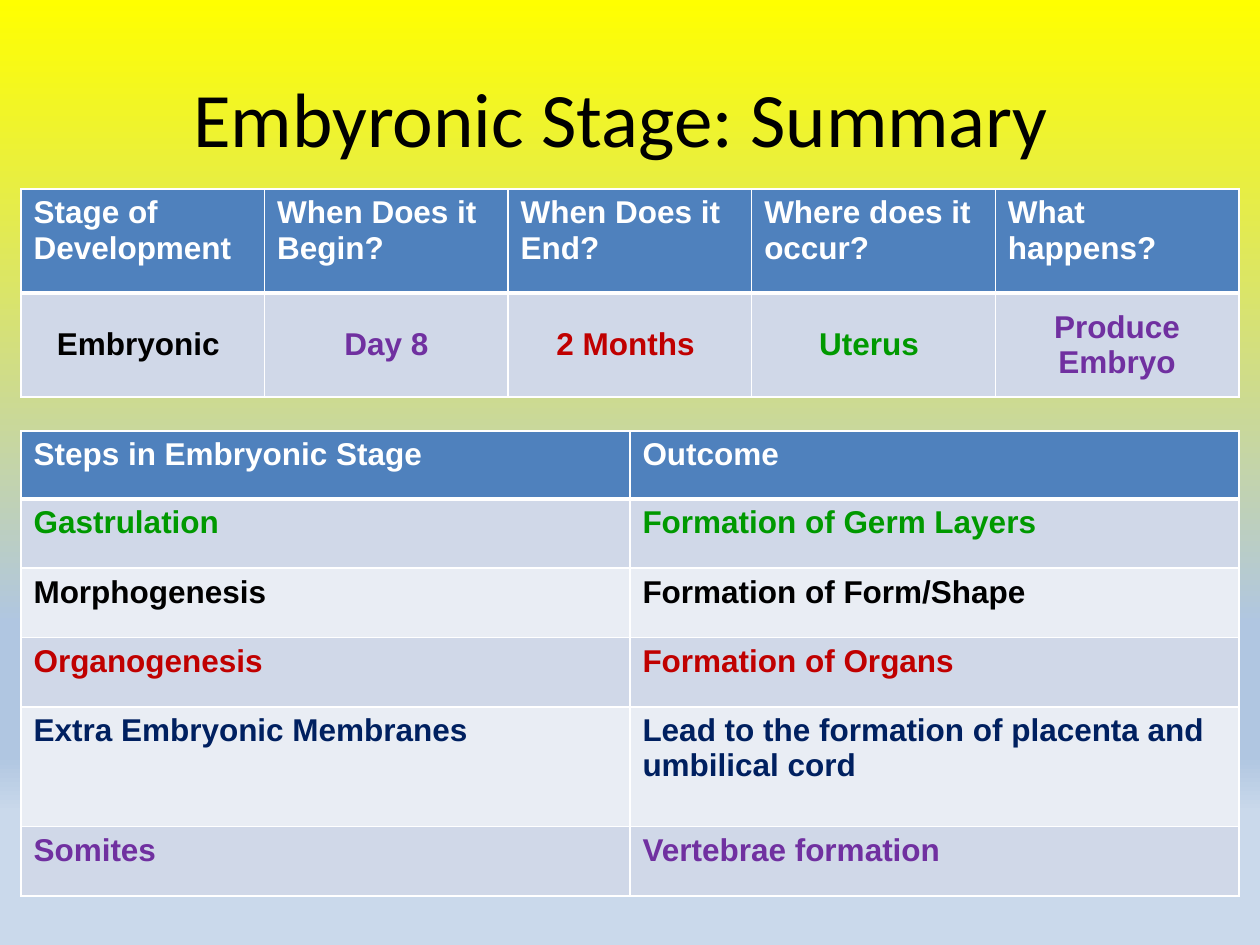
from lxml.etree import SubElement as Sub
from pptx import Presentation
from pptx.dml.color import RGBColor
from pptx.enum.text import MSO_ANCHOR as Anchor, PP_ALIGN as Align
from pptx.oxml.ns import qn
from pptx.util import Inches, Pt

WIDE, HIGH = 10, 7.5
SIDE = WIDE / 60
SPAN = WIDE - 2 * SIDE
WHITE, BLACK, BLUE, NAVY = "FFFFFF", "000000", "4F81BD", "002060"
GREEN, RED, PLUM = "009900", "C00000", "7030A0"
BANDS = ["D0D8E8", "E9EDF4"]
SKY = [(0, "FFFF00"), (66, "B0C6E1"), (80, "B0C6E1"), (86, "CAD9EB")]

STAGE = [
    ("Stage of Development", "Embryonic ", BLACK),
    ("When Does it Begin?", "Day 8", PLUM),
    ("When Does it End?", "2 Months ", RED),
    ("Where does it occur?", "Uterus ", GREEN),
    ("What happens?", "Produce Embryo", PLUM),
]
STEPS = [
    ("Steps in Embryonic Stage", "Outcome", WHITE),
    ("Gastrulation", "Formation of Germ Layers", GREEN),
    ("Morphogenesis", "Formation of Form/Shape", BLACK),
    ("Organogenesis", "Formation of Organs", RED),
    ("Extra Embryonic Membranes",
     "Lead to the formation of placenta and umbilical cord", NAVY),
    ("Somites", "Vertebrae formation", PLUM),
]


def hue(code):
    return RGBColor.from_string(code)


def style(font, **form):
    for name, value in form.items():
        if name == "color":
            font.color.rgb = hue(value)
        else:
            setattr(font, name, value)


def paint_back(slide):
    fill = slide.background.fill
    fill.gradient()
    fill.gradient_angle = 270
    stops = slide.background._cSld.find(".//" + qn("a:gsLst"))
    stops.clear()
    for place, code in SKY:
        stop = Sub(stops, qn("a:gs"), pos=str(place * 1000))
        Sub(stop, qn("a:srgbClr"), val=code)


def add_title(slide, box, text):
    title = slide.shapes.title
    title.left, title.top, title.width, title.height = map(Inches, box)
    frame = title.text_frame
    frame.text = text
    frame.vertical_anchor = Anchor.MIDDLE
    para = frame.paragraphs[0]
    para.alignment = Align.CENTER
    style(para.runs[0].font, name="Calibri", size=Pt(44), color=BLACK)


def rule_cell(cell, row):
    """Draw white cell borders, thick between the head and the body."""
    props = cell._tc.get_or_add_tcPr()
    thick = {0: "lnB", 1: "lnT"}.get(row)
    for side in ("lnL", "lnR", "lnT", "lnB"):
        width = Pt(3 if side == thick else 1)
        line = Sub(props, qn("a:" + side), w=str(width))
        Sub(Sub(line, qn("a:solidFill")), qn("a:srgbClr"), val=WHITE)


def add_grid(slide, box, rows, heights, center=False):
    """Place a table of (text, colour) rows; center applies to the body."""
    count = len(rows[0])
    table = slide.shapes.add_table(len(rows), count, *map(Inches, box)).table
    for col in table.columns:
        col.width = Inches(box[2] / count)
    for r, (cells, height) in enumerate(zip(rows, heights)):
        table.rows[r].height = Inches(height)
        for c, (text, code) in enumerate(cells):
            cell = table.cell(r, c)
            rule_cell(cell, r)
            cell.fill.solid()
            cell.fill.fore_color.rgb = hue(BANDS[(r - 1) % 2] if r else BLUE)
            cell.text = text
            para = cell.text_frame.paragraphs[0]
            style(para.runs[0].font, name="Arial", size=Pt(18), bold=True,
                  color=code)
            if center and r:
                para.alignment = Align.CENTER
                cell.vertical_anchor = Anchor.MIDDLE


def main():
    deck = Presentation()
    deck.slide_width, deck.slide_height = Inches(WIDE), Inches(HIGH)
    slide = deck.slides.add_slide(deck.slide_layouts[5])
    paint_back(slide)
    add_title(slide, (WIDE / 20, HIGH / 25, WIDE * 0.9, HIGH / 6),
              "Embyronic Stage: Summary ")
    stage = [[(head, WHITE) for head, _, _ in STAGE],
             [(text, code) for _, text, code in STAGE]]
    add_grid(slide, (SIDE, HIGH / 5, SPAN, 1.65), stage, [0.825] * 2, True)
    steps = [[(step, code), (end, code)] for step, end, code in STEPS]
    add_grid(slide, (SIDE, 3.42, SPAN, 3.7), steps,
             [0.54] + [0.55] * 3 + [0.95, 0.55])
    deck.save("out.pptx")


if __name__ == "__main__":
    main()
